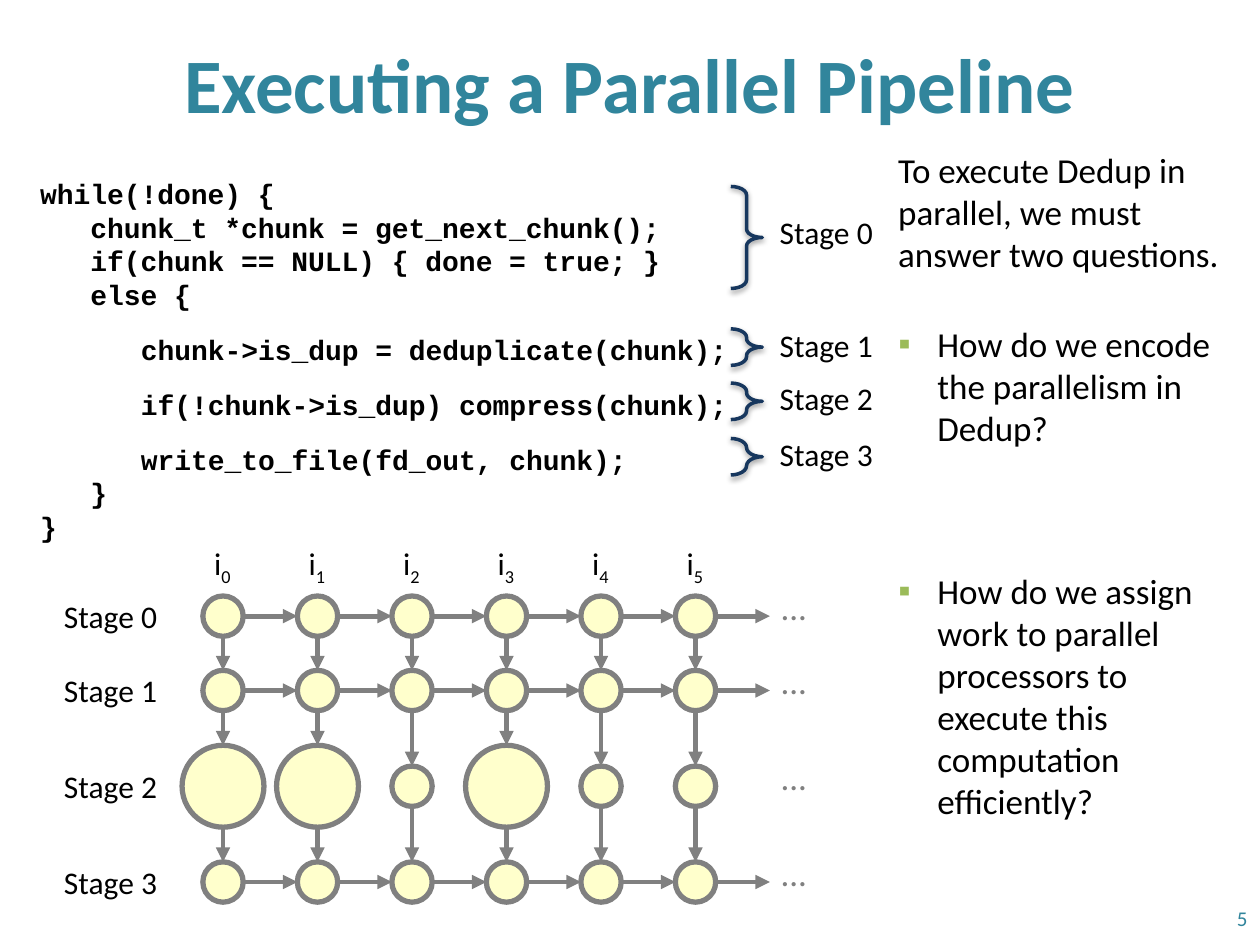
from lxml import etree
from pptx import Presentation
from pptx import util as u
from pptx.dml.color import RGBColor
from pptx.enum import shapes, text
from pptx.oxml import parse_xml
from pptx.oxml.ns import nsdecls, qn

# Content
TITLE = "Executing a Parallel Pipeline"
INTRO = "To execute Dedup in parallel, we must answer two questions."
QUESTIONS = [  # text, top, height
    ("How do we encode the parallelism in Dedup?", 2.51, 1.11),
    ("How do we assign work to parallel processors to execute this "
     "computation efficiently?", 4.47, 2.12),
]
CODE = [  # nesting level, line, gap before in points
    (0, "while(!done) {", 0),
    (1, "chunk_t *chunk = get_next_chunk();", 0),
    (1, "if(chunk == NULL) { done = true; }", 0),
    (1, "else {", 0),
    (2, "chunk->is_dup = deduplicate(chunk);", 12),
    (2, "if(!chunk->is_dup) compress(chunk);", 12),
    (2, "write_to_file(fd_out, chunk);", 12),
    (1, "}", 0),
    (0, "}", 0),
]
STAGES = [  # name, brace top, brace height, brace curl, label top, node row centre
    ("Stage 0", 1.48, 0.81, 0.27, 1.64, 4.89),
    ("Stage 1", 2.61, 0.29, 0.27, 2.54, 5.48),
    ("Stage 2", 3.04, 0.29, 0.27, 2.96, 6.24),
    ("Stage 3", 3.48, 0.29, 0.29, 3.40, 7.00),
]
ITERATIONS = 6
COMPRESS_STAGE = 2
COMPRESSED = {0, 1, 3}  # iterations whose chunk is compressed: large nodes

# Style
COLORS = {"teal": "31859C", "gray": "808080", "node": "FFFFCC",
          "brace": "17375E", "bullet": "9BBB59", "black": "000000"}
FIRST_X, STEP_X = 1.77, 0.75
SMALL_R, LARGE_R = 0.16, 0.325
CODE_INDENT = 0.4


def rgb(name):
    return RGBColor.from_string(COLORS[name])


def place(shape, left, top, width, height):
    shape.left, shape.top = u.Inches(left), u.Inches(top)
    shape.width, shape.height = u.Inches(width), u.Inches(height)


def format_runs(paragraph, size, color="black", font="Calibri", bold=False):
    for run in paragraph.runs:
        run.font.size, run.font.name, run.font.bold = u.Pt(size), font, bold
        run.font.color.rgb = rgb(color)


def add_label(slide, words, box, size=18, color="black", align=text.PP_ALIGN.LEFT):
    label = slide.shapes.add_textbox(*map(u.Inches, box))
    frame = label.text_frame
    frame.word_wrap = True
    frame.text = words
    frame.paragraphs[0].alignment = align
    format_runs(frame.paragraphs[0], size, color)
    return frame


def add_arrow(slide, x1, y1, x2, y2):
    arrow = slide.shapes.add_connector(
        shapes.MSO_CONNECTOR.STRAIGHT, *map(u.Inches, (x1, y1, x2, y2)))
    arrow.line.color.rgb = rgb("gray")
    arrow.line.width = u.Pt(2.75)
    etree.SubElement(arrow.line._get_or_add_ln(), qn("a:tailEnd"), type="triangle")
    etree.SubElement(arrow._element.spPr, qn("a:effectLst"))


def radius(stage, iteration):
    large = stage == COMPRESS_STAGE and iteration in COMPRESSED
    return LARGE_R if large else SMALL_R


def add_node(slide, x, y, r):
    node = slide.shapes.add_shape(
        shapes.MSO_SHAPE.OVAL, *map(u.Inches, (x - r, y - r, 2 * r, 2 * r)))
    node.shadow.inherit = False
    node.fill.solid()
    node.fill.fore_color.rgb = rgb("node")
    node.line.color.rgb = rgb("gray")
    node.line.width = u.Pt(3)


def add_brace(slide, top, height, curl):
    brace = slide.shapes.add_shape(
        shapes.MSO_SHAPE.RIGHT_BRACE, *map(u.Inches, (5.8, top, 0.25, height)))
    brace.adjustments[0] = curl
    brace.fill.background()
    brace.line.color.rgb = rgb("brace")
    brace.line.width = u.Pt(2)
    brace._element.spPr.append(parse_xml(
        f'<a:effectLst {nsdecls("a")}><a:outerShdw blurRad="40000" dist="20000" '
        f'dir="5400000" rotWithShape="0"><a:srgbClr val="{COLORS["black"]}">'
        '<a:alpha val="38000"/></a:srgbClr></a:outerShdw></a:effectLst>'))


def add_question(body, words, top, height):
    place(body, 7.03, top, 2.87, height)
    frame = body.text_frame
    frame.text = words
    frame.auto_size = text.MSO_AUTO_SIZE.SHAPE_TO_FIT_TEXT
    paragraph = frame.paragraphs[0]
    paragraph.space_before = u.Pt(0)
    format_runs(paragraph, 20)
    props = paragraph._p.get_or_add_pPr()
    props.set("marL", str(u.Inches(0.31)))
    props.set("indent", str(u.Inches(-0.31)))
    color = etree.SubElement(props, qn("a:buClr"))
    etree.SubElement(color, qn("a:srgbClr"), val=COLORS["bullet"])
    etree.SubElement(props, qn("a:buFont"), typeface="Arial")
    etree.SubElement(props, qn("a:buChar"), char="▪")


def add_code(slide):
    frame = add_label(slide, "", (0.22, 1.35, 5.67, 3.03))
    for number, (level, line, gap) in enumerate(CODE):
        paragraph = frame.add_paragraph() if number else frame.paragraphs[0]
        paragraph.text = line
        paragraph.line_spacing = u.Pt(19.3)
        paragraph.space_before = u.Pt(gap)
        paragraph._p.get_or_add_pPr().set("marL", str(u.Inches(level * CODE_INDENT)))
        format_runs(paragraph, 16, font="Courier New", bold=True)


def add_pipeline(slide):
    columns = [FIRST_X + STEP_X * i for i in range(ITERATIONS)]
    rows = [stage[-1] for stage in STAGES]

    # Iteration headings
    for i, x in enumerate(columns):
        paragraph = add_label(slide, "i", (x - 0.27, 4.27, 0.53, 0.4),
                              align=text.PP_ALIGN.CENTER).paragraphs[0]
        subscript = paragraph.add_run()
        subscript.text = str(i)
        format_runs(paragraph, 18)
        subscript._r.get_or_add_rPr().set("baseline", "-25000")

    for s, y in enumerate(rows):
        # Row label and continuation dots
        add_label(slide, STAGES[s][0], (0.41, y - 0.2, 1.03, 0.4))
        dots = add_label(slide, "...", (6.09, y - 0.25, 0.42, 0.39), 20, "gray",
                         text.PP_ALIGN.CENTER)
        dots.margin_top = 0
        dots.vertical_anchor = text.MSO_ANCHOR.MIDDLE
        # Nodes with their arrows to the next iteration and the next stage
        for i, x in enumerate(columns):
            r = radius(s, i)
            add_node(slide, x, y, r)
            if s != COMPRESS_STAGE:
                add_arrow(slide, x + r, y, x + STEP_X - r, y)
            if s + 1 < len(rows):
                add_arrow(slide, x, y + r, x, rows[s + 1] - radius(s + 1, i))


def main():
    deck = Presentation()
    deck.slide_width, deck.slide_height = u.Inches(10), u.Inches(7.5)
    slide = deck.slides.add_slide(deck.slide_layouts[3])

    # Title
    title, *bodies = slide.placeholders
    place(title, 0.5, 0.03, 9, 1.25)
    title.text_frame.text = TITLE
    title.text_frame.vertical_anchor = text.MSO_ANCHOR.MIDDLE
    format_runs(title.text_frame.paragraphs[0], 44, "teal", bold=True)

    # Introduction and questions
    add_label(slide, INTRO, (7.03, 1.13, 2.87, 1.11), 20)
    for body, question in zip(bodies, QUESTIONS):
        add_question(body, *question)

    # Code with its stages
    add_code(slide)
    for name, top, height, curl, label_top, _ in STAGES:
        add_brace(slide, top, height, curl)
        add_label(slide, name, (6.09, label_top, 1.14, 0.4))

    add_pipeline(slide)

    # Slide number
    number = add_label(slide, "5", (7.67, 7.09, 2.33, 0.4), 12, "teal",
                       text.PP_ALIGN.RIGHT)
    number.vertical_anchor = text.MSO_ANCHOR.MIDDLE

    deck.save("out.pptx")


if __name__ == "__main__":
    main()
